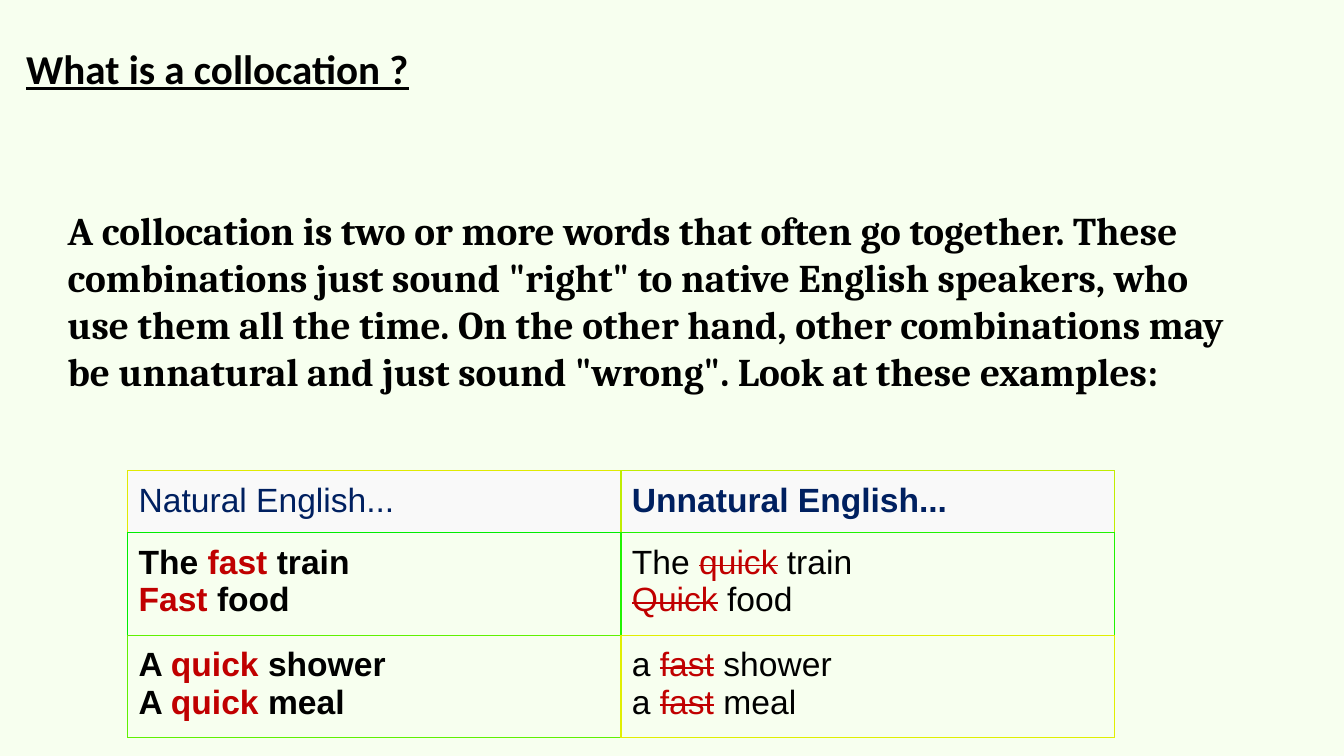
from lxml import etree
from pptx import Presentation
from pptx.dml.color import RGBColor as RGB
from pptx.enum.text import MSO_ANCHOR as Anchor
from pptx.oxml.ns import qn
from pptx.util import Cm, Pt

COLORS = {
    "page": "F7FFEF", "header": "F9F9F9", "navy": "002060",
    "text": "000000", "red": "C00000",
    "yellow": "E0EB02", "lime": "C0ED02", "green": "00ED02",
    "bright": "20F302", "leaf": "60F102", "lemon": "E0EF02",
}
TITLE = "What is a collocation ?"
DEFINITION = (
    "A collocation is two or more words that often go together. These "
    'combinations just sound "right" to native English speakers, who use '
    "them all the time. On the other hand, other combinations may be "
    'unnatural and just sound "wrong". Look at these examples:'
)
# Words between asterisks are the highlighted collocates
EXAMPLES = [
    ["Natural English...", "Unnatural English..."],
    ["The *fast* train\n*Fast* food", "The *quick* train\n*Quick* food"],
    ["A *quick* shower\nA *quick* meal", "a *fast* shower\na *fast* meal"],
]
# Left, right, top and bottom border of each cell
BORDERS = [
    [("yellow", "lime", "yellow", "green"), ("lime", "lime", "lime", "bright")],
    [("green", "bright", "green", "leaf"), ("bright", "bright", "bright", "lemon")],
    [("leaf", "lemon", "leaf", "leaf"), ("lemon",) * 4],
]


def rgb(name):
    return RGB.from_string(COLORS[name])


def style_run(r, font, size, color, bold):
    r.font.name = font
    r.font.size = Pt(size)
    r.font.bold = bold
    r.font.color.rgb = rgb(color)


def add_text(slide, box, text, font, size):
    """Bold text in a wrapping box; returns the text frame."""
    tf = slide.shapes.add_textbox(*map(Cm, box)).text_frame
    tf.word_wrap = True
    tf.text = text
    style_run(tf.paragraphs[0].runs[0], font, size, "text", True)
    return tf


def add_title(slide, box):
    tf = add_text(slide, box, TITLE, "Calibri", 44)
    tf.vertical_anchor = Anchor.TOP
    tf.margin_top = Cm(0.5)
    tf.paragraphs[0].runs[0].font.underline = True


def set_borders(cell, names):
    tc_pr = cell._tc.get_or_add_tcPr()
    for i, (side, name) in enumerate(zip("LRTB", names)):
        ln = etree.Element(qn(f"a:ln{side}"), w=str(Pt(1.5)))
        fill = etree.SubElement(ln, qn("a:solidFill"))
        etree.SubElement(fill, qn("a:srgbClr"), val=COLORS[name])
        tc_pr.insert(i, ln)


def fill_cell(cell, text, color, bold, strike):
    cell.margin_left = cell.margin_right = Cm(0.41)
    cell.margin_top = cell.margin_bottom = Cm(0.41)
    p = cell.text_frame.paragraphs[0]
    for n, line in enumerate(text.split("\n")):
        if n:
            p.add_line_break()
        for k, part in enumerate(line.split("*")):
            if not part:
                continue
            marked = k % 2 == 1
            r = p.add_run()
            r.text = part
            style_run(r, "Arial", 36, "red" if marked else color, bold)
            if marked and strike:
                r.font._element.set("strike", "sngStrike")


def add_examples(slide, box):
    table = slide.shapes.add_table(3, 2, *map(Cm, box)).table
    table.first_row = table.horz_banding = False
    for row, height in zip(table.rows, (2.31, 3.84, 3.84)):
        row.height = Cm(height)
    for i, texts in enumerate(EXAMPLES):
        header = i == 0
        for j, text in enumerate(texts):
            cell = table.cell(i, j)
            if header:
                cell.fill.solid()
                cell.fill.fore_color.rgb = rgb("header")
            else:
                cell.fill.background()
            unnatural = j == 1
            # Bold: the unnatural heading and the natural examples
            fill_cell(cell, text, "navy" if header else "text",
                      header == unnatural, unnatural)
            set_borders(cell, BORDERS[i][j])


def main():
    prs = Presentation()
    prs.slide_width, prs.slide_height = Cm(50.8), Cm(28.58)
    slide = prs.slides.add_slide(prs.slide_layouts[6])
    slide.background.fill.solid()
    slide.background.fill.fore_color.rgb = rgb("page")

    add_title(slide, (0.74, 1.14, 48.54, 4.78))
    add_text(slide, (2.31, 7.67, 45.44, 9.25), DEFINITION, "Cambria", 42)
    add_examples(slide, (4.83, 17.8, 37.29, 9.99))
    prs.save("out.pptx")


if __name__ == "__main__":
    main()
